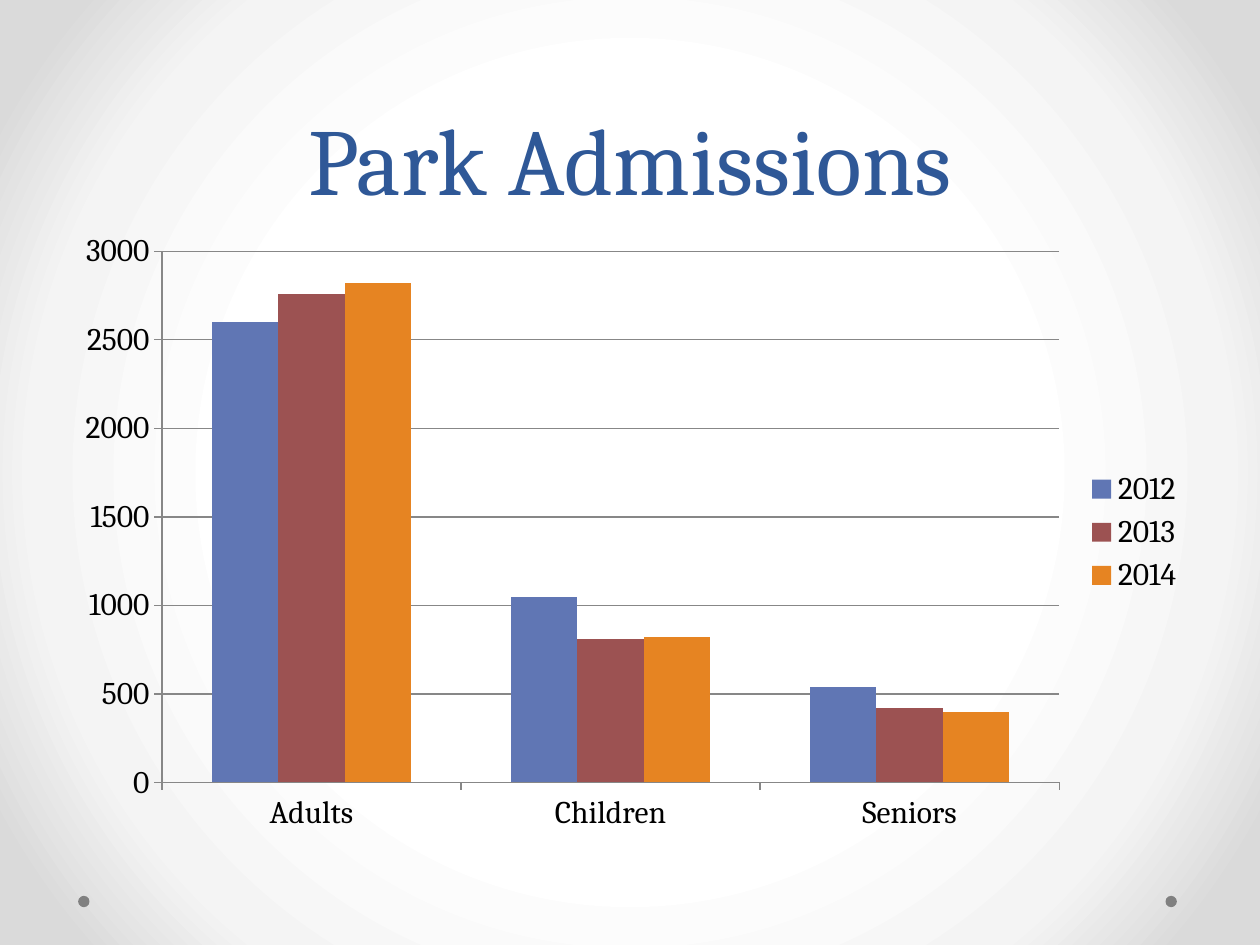
from pptx import Presentation
from pptx import util as u
from pptx.chart import data
from pptx.dml.color import RGBColor
from pptx.enum import chart as ch, shapes, text
from pptx.oxml import parse_xml
from pptx.oxml.ns import nsdecls

FACE = "Cambria"
NAVY = RGBColor(0x2F, 0x58, 0x97)
BLACK = RGBColor(0, 0, 0)
GREY = RGBColor(0x80, 0x80, 0x80)
RULE = RGBColor(0x87, 0x87, 0x87)
BLUE = RGBColor(0x60, 0x76, 0xB4)
RED = RGBColor(0x9C, 0x52, 0x52)
ORANGE = RGBColor(0xE6, 0x84, 0x22)

GLOW = [(0, "FFFFFF"), (50, "FFFFFF"), (76, "F4F4F4"), (92, "DADADA"), (100, "DADADA")]
GROUPS = ["Adults", "Children", "Seniors"]
YEARS = {
    "2012": ((2600, 1050, 540), BLUE),
    "2013": ((2760, 810, 420), RED),
    "2014": ((2820, 820, 400), ORANGE),
}


def style(item, **values):
    for name, value in values.items():
        setattr(item, name, value)


def place(item, box):
    names = ("left", "top", "width", "height")
    style(item, **dict(zip(names, map(u.Inches, box))))


def add_glow(slide):
    # Circular gradient, from white in the middle to grey corners
    slide.background.fill.solid()
    frame = slide.element.xpath("p:cSld/p:bg/p:bgPr")[0]
    stops = "".join(
        f'<a:gs pos="{pos * 1000}"><a:srgbClr val="{tint}"/></a:gs>' for pos, tint in GLOW
    )
    grad = parse_xml(
        f'<a:gradFill {nsdecls("a")} rotWithShape="1"><a:gsLst>{stops}</a:gsLst>'
        '<a:path path="circle"><a:fillToRect l="50000" t="50000" r="50000" b="50000"/>'
        "</a:path></a:gradFill>"
    )
    frame.replace(frame[0], grad)


def add_dot(slide, box):
    dot = slide.shapes.add_shape(shapes.MSO_SHAPE.OVAL, *map(u.Inches, box))
    dot.shadow.inherit = False
    dot.fill.solid()
    dot.fill.fore_color.rgb = GREY
    dot.line.fill.background()


def set_title(slide, box):
    title = slide.shapes.title
    place(title, box)
    frame = title.text_frame
    frame.text = "Park Admissions"
    style(frame, vertical_anchor=text.MSO_ANCHOR.BOTTOM, word_wrap=True,
          auto_size=text.MSO_AUTO_SIZE.NONE)
    para = frame.paragraphs[0]
    style(para, alignment=text.PP_ALIGN.CENTER, line_spacing=u.Pt(58))
    font = para.runs[0].font
    style(font, name=FACE, size=u.Pt(54))
    font.color.rgb = NAVY


def add_bars(slide, box):
    table = data.CategoryChartData()
    table.categories = GROUPS
    for year, (counts, _) in YEARS.items():
        table.add_series(year, counts)
    chart = slide.shapes.add_chart(
        ch.XL_CHART_TYPE.COLUMN_CLUSTERED, *map(u.Inches, box), table
    ).chart
    style(chart, has_title=False, has_legend=True)
    style(chart.font, name=FACE, size=u.Pt(18))
    chart.font.color.rgb = BLACK
    style(chart.legend, position=ch.XL_LEGEND_POSITION.RIGHT, include_in_layout=False)

    # Columns
    plot = chart.plots[0]
    style(plot, gap_width=150, overlap=0, vary_by_categories=False)
    for bar, (_, tint) in zip(plot.series, YEARS.values()):
        bar.invert_if_negative = False
        bar.format.fill.solid()
        bar.format.fill.fore_color.rgb = tint

    # Axes and grid
    scale = chart.value_axis
    style(scale, minimum_scale=0, maximum_scale=3000, major_unit=500,
          has_major_gridlines=True)
    for axis in (chart.category_axis, scale):
        style(axis, major_tick_mark=ch.XL_TICK_MARK.OUTSIDE,
              minor_tick_mark=ch.XL_TICK_MARK.NONE)
    for part in (chart.category_axis, scale, scale.major_gridlines):
        line = part.format.line
        line.color.rgb = RULE
        line.width = u.Pt(0.75)


def main():
    deck = Presentation()
    style(deck, slide_width=u.Inches(10), slide_height=u.Inches(7.5))
    slide = deck.slides.add_slide(deck.slide_layouts.get_by_name("Title Only"))
    add_glow(slide)
    for left in (9.25, 0.62):
        add_dot(slide, (left, 7.11, 0.09, 0.09))
    set_title(slide, (0.5, 0, 9, 1.75))
    add_bars(slide, (0.5, 1.75, 9, 4.95))
    deck.save("out.pptx")


if __name__ == "__main__":
    main()
